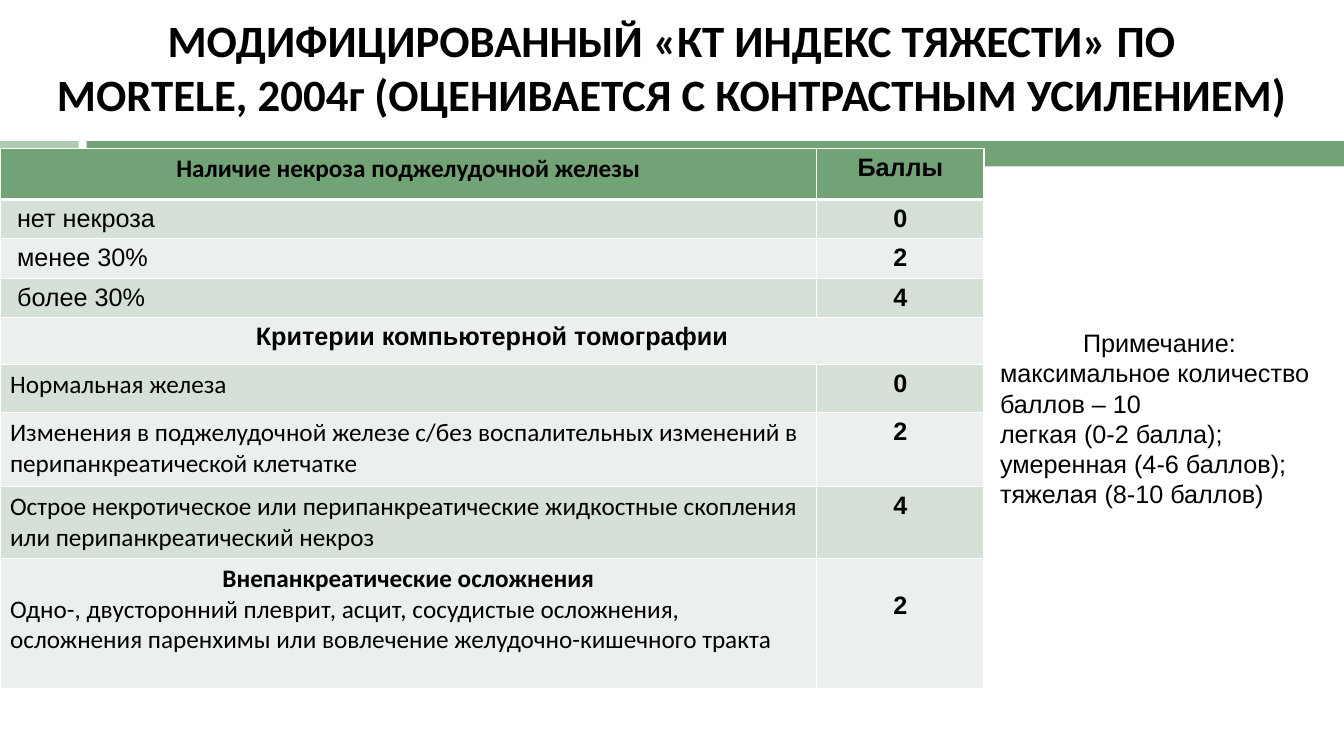
from lxml.etree import SubElement
from pptx import Presentation
from pptx.dml.color import RGBColor
from pptx.enum.shapes import MSO_SHAPE as Shape
from pptx.enum.text import MSO_ANCHOR as Anchor, PP_ALIGN as Align
from pptx.oxml.ns import qn
from pptx.util import Inches, Pt

COLORS = {"text": "000000", "green": "72A376", "light_green": "B0CCB0",
          "odd_row": "D5E0D6", "even_row": "EBF0EC", "border": "FFFFFF"}

# Row: height, criterion font, criterion lines, score
ROWS = [
    (0.51, "Calibri", ["Наличие некроза поджелудочной железы"], "Баллы"),
    (0.38, "Arial", ["нет некроза"], "0"),
    (0.38, "Arial", ["менее 30%"], "2"),
    (0.38, "Arial", ["более 30%"], "4"),
    (0.47, "Arial", ["Критерии компьютерной томографии"], None),
    (0.47, "Calibri", ["Нормальная железа"], "0"),
    (0.74, "Calibri", ["Изменения в поджелудочной железе с/без воспалительных "
                       "изменений в перипанкреатической клетчатке"], "2"),
    (0.71, "Calibri", ["Острое некротическое или перипанкреатические жидкостные "
                       "скопления или перипанкреатический некроз"], "4"),
    (1.29, "Calibri", ["Внепанкреатические осложнения",
                       "Одно-, двусторонний плеврит, асцит, сосудистые осложнения, "
                       "осложнения паренхимы или вовлечение желудочно-кишечного "
                       "тракта"], "2"),
]
HEADINGS = {ROWS[index][2][0] for index in (0, 4, 8)}
NOTE = ["Примечание:", "максимальное количество баллов – 10",
        "легкая (0-2 балла); умеренная (4-6 баллов); тяжелая (8-10 баллов)"]


def color(name):
    return RGBColor.from_string(COLORS[name])


def write_lines(frame, lines, font_name, size, headings=(), bold_headings=True):
    """Fill a text frame; lines listed in headings are centred."""
    for index, line in enumerate(lines):
        paragraph = frame.paragraphs[0] if index == 0 else frame.add_paragraph()
        paragraph.text = line
        paragraph.alignment = Align.CENTER if line in headings else Align.LEFT
        font = paragraph.font
        font.name, font.size = font_name, Pt(size)
        font.bold = bold_headings and line in headings
        font.color.rgb = color("text")


def add_text(slide, left, top, width, height):
    box = slide.shapes.add_textbox(Inches(left), Inches(top),
                                   Inches(width), Inches(height))
    box.text_frame.word_wrap = True
    return box.text_frame


def add_band(slide, left, top, width, height):
    gap_start, gap_end = 0.78, 0.86
    parts = [(left, gap_start, "light_green"),
             (left + gap_end, width - gap_end, "green")]
    for part_left, part_width, fill in parts:
        bar = slide.shapes.add_shape(Shape.RECTANGLE, Inches(part_left), Inches(top),
                                     Inches(part_width), Inches(height))
        bar.shadow.inherit = False
        bar.fill.solid()
        bar.fill.fore_color.rgb = color(fill)
        bar.line.fill.background()


def add_title(slide, left, top, width, height):
    frame = add_text(slide, left, top, width, height)
    frame.vertical_anchor = Anchor.MIDDLE
    lines = ["МОДИФИЦИРОВАННЫЙ «КТ ИНДЕКС ТЯЖЕСТИ» ПО",
             "MORTELE, 2004г (ОЦЕНИВАЕТСЯ С КОНТРАСТНЫМ УСИЛЕНИЕМ)"]
    write_lines(frame, lines, "Calibri", 32, headings=lines)


def style_cell(cell, row_index):
    """Set the row fill, the inner margins and the white borders."""
    fill = "green" if row_index == 0 else "odd_row" if row_index % 2 else "even_row"
    cell.fill.solid()
    cell.fill.fore_color.rgb = color(fill)
    cell.margin_top, cell.margin_bottom = Inches(0.05), Inches(0.04)
    properties = cell._tc.get_or_add_tcPr()
    thick_edge = {0: "lnB", 1: "lnT"}.get(row_index)
    for position, edge in enumerate(("lnL", "lnR", "lnT", "lnB")):
        border = properties.makeelement(
            qn(f"a:{edge}"), {"w": str(Pt(3 if edge == thick_edge else 1))})
        solid = SubElement(border, qn("a:solidFill"))
        SubElement(solid, qn("a:srgbClr"), val=COLORS["border"])
        properties.insert(position, border)


def add_score_table(slide, left, top, width):
    score_width = 1.66
    height = sum(row[0] for row in ROWS)
    table = slide.shapes.add_table(len(ROWS), 2, Inches(left), Inches(top),
                                   Inches(width), Inches(height)).table
    table.columns[0].width = Inches(width - score_width)
    table.columns[1].width = Inches(score_width)
    for index, (row_height, font_name, lines, score) in enumerate(ROWS):
        table.rows[index].height = Inches(row_height)
        criterion, points = table.cell(index, 0), table.cell(index, 1)
        for cell in (criterion, points):
            style_cell(cell, index)
        write_lines(criterion.text_frame, lines, font_name, 18, HEADINGS)
        if score is None:
            criterion.merge(points)
            continue
        if font_name == "Arial":
            criterion.margin_left = Inches(0.17)
        if len(lines) > 1:
            points.margin_top = Inches(0.33)
        write_lines(points.text_frame, [score], "Arial", 18, [score])


def add_note(slide, left, top, width, height):
    frame = add_text(slide, left, top, width, height)
    write_lines(frame, NOTE, "Arial", 18, NOTE[:1], bold_headings=False)


def main():
    presentation = Presentation()
    presentation.slide_width, presentation.slide_height = Inches(13.33), Inches(7.5)
    slide = presentation.slides.add_slide(presentation.slide_layouts[6])
    add_band(slide, 0, 1.4, 13.33, 0.25)
    add_title(slide, 0, 0.1, 13.33, 1.12)
    add_score_table(slide, 0, 1.47, 9.76)
    add_note(slide, 9.82, 3.2, 3.36, 2.22)
    presentation.save("out.pptx")


if __name__ == "__main__":
    main()
